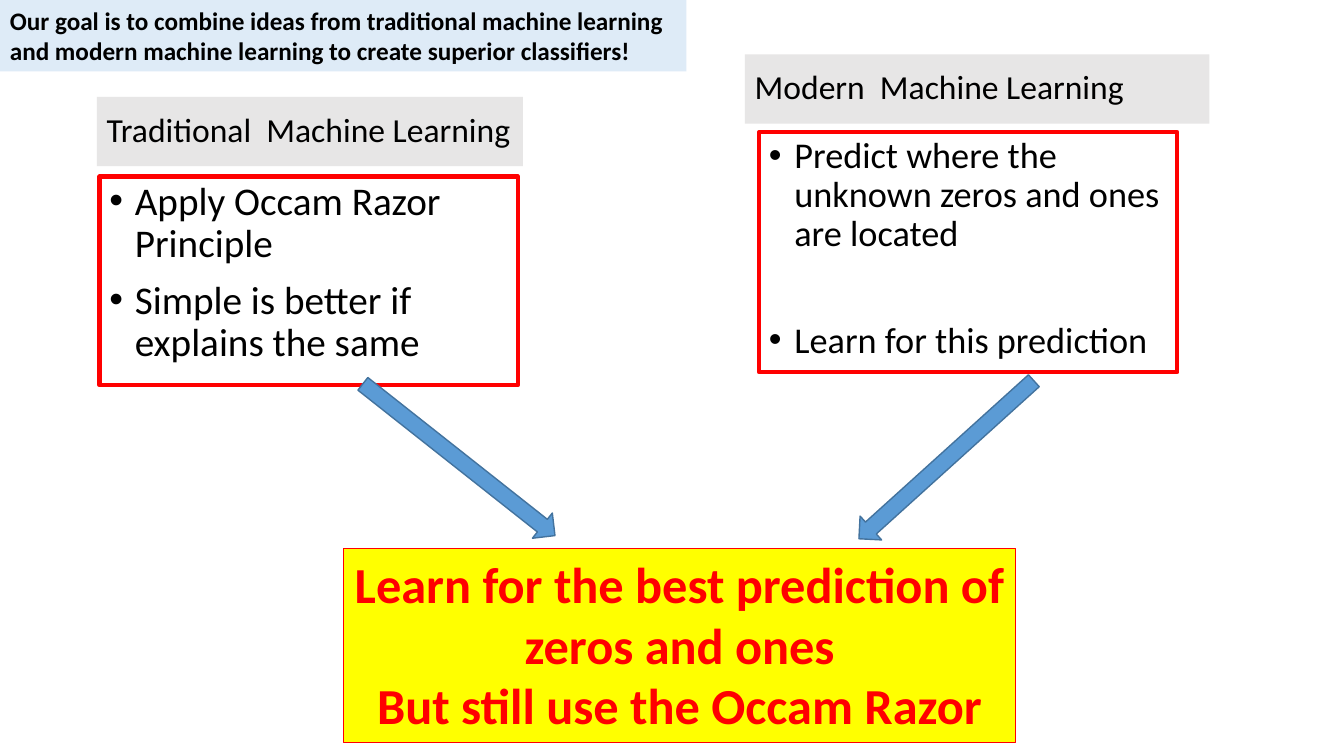
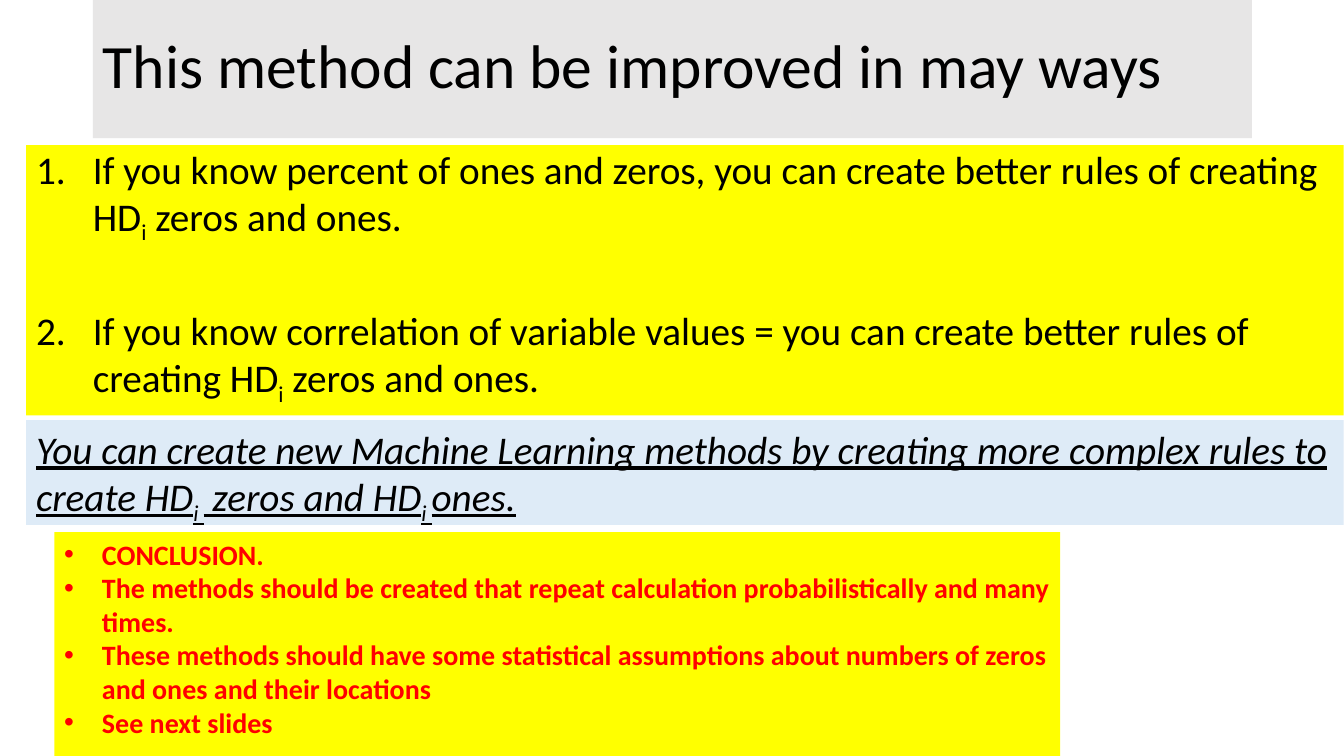
from dataclasses import dataclass, field
from typing import Optional

import lxml.etree
import pptx
import pptx.dml.color
import pptx.enum.shapes
import pptx.enum.text
import pptx.oxml.ns
import pptx.util

Cm, Pt = pptx.util.Cm, pptx.util.Pt
SHAPE = pptx.enum.shapes.MSO_SHAPE
ALIGN = pptx.enum.text.PP_ALIGN
ANCHOR = pptx.enum.text.MSO_ANCHOR

COLORS = {
    "text": "000000",
    "red": "FF0000",
    "yellow": "FFFF00",
    "gray": "E7E6E6",
    "pale_blue": "DEEBF7",
    "arrow": "5B9BD5",
    "arrow_edge": "43739E",
}


@dataclass(frozen=True)
class Style:
    """Look of the text in one panel."""
    font: dict
    color: str = "text"
    para: dict = field(default_factory=dict)
    gap: float = 0          # points before every paragraph but the first
    bullet: Optional[str] = None
    indent: float = 0       # hanging indent in cm
    anchor: ANCHOR = ANCHOR.TOP


@dataclass(frozen=True)
class Panel:
    """A text rectangle; in its lines, |x| marks a subscript."""
    box: tuple
    lines: tuple
    style: Style
    fill: Optional[str] = None
    line: Optional[str] = None
    width: float = 0


@dataclass(frozen=True)
class Arrow:
    box: tuple
    rotation: float


# Shared text styles
TIGHT = {"line_spacing": 0.9}


def title_style(size: float) -> Style:
    return Style({"size": Pt(size)}, para=TIGHT, anchor=ANCHOR.MIDDLE)


def list_style(size: float, gap: float, bullet: str = "•",
               indent: float = 0.64) -> Style:
    return Style({"size": Pt(size)}, para=TIGHT, gap=gap, bullet=bullet,
                 indent=indent)


GOAL = Style({"size": Pt(18), "bold": True})
RESULT = Style({"size": Pt(36), "bold": True}, "red",
               {"alignment": ALIGN.CENTER})
REMARK = Style({"size": Pt(28), "italic": True, "underline": True})
CONCLUSION = Style({"size": Pt(20), "bold": True}, "red", bullet="•",
                   indent=0.95)

# Slide contents, back to front
COMBINED_IDEAS = (
    Panel((2.44, 2.44, 10.74, 1.75), ("Traditional  Machine Learning",),
          title_style(24), "gray"),
    Panel((2.51, 4.45, 10.54, 5.26),
          ("Apply Occam Razor Principle",
           "Simple is better if explains the same"),
          list_style(28, 10), line="red", width=3),
    Panel((18.77, 1.37, 11.71, 1.75), ("Modern  Machine Learning",),
          title_style(24), "gray"),
    Panel((19.13, 3.33, 10.54, 6.05),
          ("Predict where the unknown zeros and ones are located",
           "Learn for this prediction"),
          list_style(25.9, 48), line="red", width=3),
    Panel((8.66, 13.82, 16.94, 4.88),
          ("Learn for the best prediction of zeros and ones",
           "But still use the Occam Razor"),
          RESULT, "yellow", "red", 0.75),
    Arrow((8.48, 11.18, 6.17, 0.81), 38.3),
    Arrow((20.88, 11.18, 5.94, 0.81), 137.9),
    Panel((0, 0, 17.3, 1.8),
          ("Our goal is to combine ideas from traditional machine learning "
           "and modern machine learning to create superior classifiers!",),
          GOAL, "pale_blue"),
)

IMPROVEMENTS = (
    Panel((2.34, 0, 29.21, 3.48), ("This method can be improved in may ways",),
          title_style(44), "gray"),
    Panel((0.66, 3.66, 33.2, 6.81),
          ("If you know percent of ones and zeros, you can create better "
           "rules of creating HD|i| zeros and ones.",
           "If you know correlation of variable values = you can create "
           "better rules of creating HD|i| zeros and ones."),
          list_style(28, 50.7, "1.", 1.43), "yellow"),
    Panel((0.66, 10.59, 33.2, 2.64),
          ("You can create new Machine Learning methods by creating more "
           "complex rules to create HD|i | zeros and HD|i |ones.",),
          REMARK, "pale_blue"),
    Panel((1.37, 13.41, 25.35, 5.64),
          ("CONCLUSION.",
           "The methods should be created that repeat calculation "
           "probabilistically and many times.",
           "These methods should have some statistical assumptions about "
           "numbers of zeros and ones and their locations",
           "See next slides"),
          CONCLUSION, "yellow"),
)


def rgb(name: str) -> pptx.dml.color.RGBColor:
    return pptx.dml.color.RGBColor.from_string(COLORS[name])


def add_shape(s, kind, box: tuple, fill: Optional[str],
              line: Optional[str], width: float):
    sp = s.shapes.add_shape(kind, *map(Cm, box))
    sp.shadow.inherit = False
    for part, color in ((sp.fill, fill), (sp.line.fill, line)):
        if color:
            part.solid()
            part.fore_color.rgb = rgb(color)
        else:
            part.background()
    if line:
        sp.line.width = Pt(width)
    return sp


def set_bullet(p, bullet: str, indent: float) -> None:
    ppr = p._p.get_or_add_pPr()
    ppr.set("marL", str(Cm(indent)))
    ppr.set("indent", str(-Cm(indent)))
    qn = pptx.oxml.ns.qn
    if bullet == "1.":
        lxml.etree.SubElement(ppr, qn("a:buAutoNum"), type="arabicPeriod")
    else:
        lxml.etree.SubElement(ppr, qn("a:buFont"), typeface="Arial")
        lxml.etree.SubElement(ppr, qn("a:buChar"), char=bullet)


def add_line(p, text: str, style: Style, first: bool) -> None:
    formats = {"alignment": ALIGN.LEFT,
               "space_before": Pt(0 if first else style.gap), **style.para}
    for name, value in formats.items():
        setattr(p, name, value)
    if style.bullet:
        set_bullet(p, style.bullet, style.indent)
    for i, piece in enumerate(text.split("|")):
        r = p.add_run()
        r.text = piece
        for name, value in {"name": "Calibri", **style.font}.items():
            setattr(r.font, name, value)
        r.font.color.rgb = rgb(style.color)
        if i % 2:
            r._r.get_or_add_rPr().set("baseline", "-25000")


def draw_panel(s, panel: Panel) -> None:
    sp = add_shape(s, SHAPE.RECTANGLE, panel.box, panel.fill, panel.line,
                   panel.width)
    tf = sp.text_frame
    tf.word_wrap = True
    tf.vertical_anchor = panel.style.anchor
    for i, text in enumerate(panel.lines):
        p = tf.add_paragraph() if i else tf.paragraphs[0]
        add_line(p, text, panel.style, i == 0)


def draw_arrow(s, arrow: Arrow) -> None:
    sp = add_shape(s, SHAPE.RIGHT_ARROW, arrow.box, "arrow", "arrow_edge", 1)
    sp.rotation = arrow.rotation


def main() -> None:
    prs = pptx.Presentation()
    prs.slide_width, prs.slide_height = Cm(33.87), Cm(19.05)
    for items in (COMBINED_IDEAS, IMPROVEMENTS):
        s = prs.slides.add_slide(prs.slide_layouts[6])
        for item in items:
            draw = draw_arrow if isinstance(item, Arrow) else draw_panel
            draw(s, item)
    prs.save("out.pptx")


if __name__ == "__main__":
    main()
